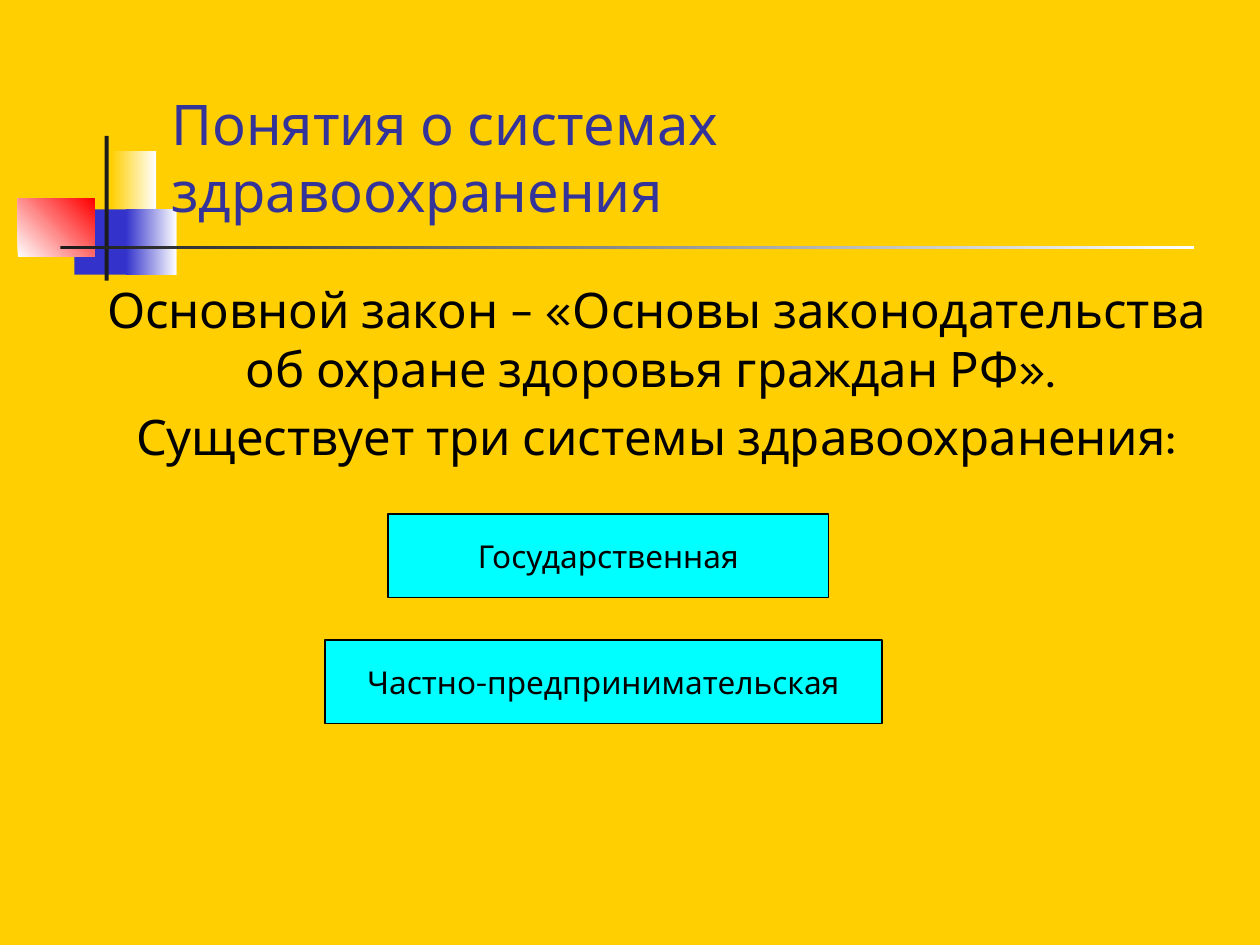
from pptx import Presentation
from pptx.dml.color import RGBColor
from pptx.enum.shapes import MSO_SHAPE as Shape
from pptx.enum.text import MSO_ANCHOR as Anchor, MSO_AUTO_SIZE as AutoSize, PP_ALIGN as Align
from pptx.util import Cm, Pt

FONT = "Karla"
YELLOW, BLUE, RED, WHITE = "FFCF01", "3333CC", "FF0000", "FFFFFF"
DARK, BLACK, CYAN, NAVY = "1C1C1C", "000000", "00FFFF", "333399"

# left, top, width, height in cm; colours (two make a gradient); angle
DECORATION = [
    ((2.24, 3.05, 0.91, 1.32), (YELLOW, WHITE), 0),
    ((1.5, 4.22, 1.17, 1.32), (BLUE,), 0),
    ((2.54, 4.22, 1.02, 1.32), (BLUE, WHITE), 0),
    ((0.36, 4.01, 1.55, 1.17), (WHITE, RED), 45),
    ((2.11, 2.74, 0.08, 2.92), (DARK,), 0),
    ((1.22, 4.95, 22.86, 0.08), (DARK, WHITE), 0),
]
SYSTEMS = [
    ("Государственная", (7.82, 10.36, 8.89, 1.69)),
    ("Частно-предпринимательская", (6.55, 12.9, 11.23, 1.69)),
]
BODY = [
    "Основной закон – «Основы законодательства об охране здоровья граждан РФ». ",
    "Существует три системы здравоохранения:",
]


def rgb(value):
    return RGBColor.from_string(value)


def add_run(p, text, size, color):
    r = p.add_run()
    r.text = text
    r.font.name = FONT
    r.font.size = Pt(size)
    r.font.color.rgb = rgb(color)


def add_rect(s, box, colors, angle=0):
    sp = s.shapes.add_shape(Shape.RECTANGLE, *map(Cm, box))
    sp.shadow.inherit = False
    sp.line.fill.background()
    if len(colors) == 1:
        sp.fill.solid()
        sp.fill.fore_color.rgb = rgb(colors[0])
    else:
        sp.fill.gradient()
        sp.fill.gradient_angle = angle
        for stop, color in zip(sp.fill.gradient_stops, colors):
            stop.color.rgb = rgb(color)
    return sp


def add_title(s, text):
    sp = s.shapes.title
    sp.left, sp.top, sp.width, sp.height = map(Cm, (3.2, 0.58, 21.64, 4.06))
    tf = sp.text_frame
    tf.auto_size = AutoSize.NONE
    tf.vertical_anchor = Anchor.BOTTOM
    tf.margin_right = Cm(1)
    p = tf.paragraphs[0]
    p.alignment = Align.LEFT
    add_run(p, text, 32, NAVY)
    # Bring the title in front of the decoration
    s.shapes.element.append(sp.element)


def add_body(s, texts):
    tf = s.shapes.add_textbox(*map(Cm, (0.84, 5.51, 23.83, 11.43))).text_frame
    tf.word_wrap = True
    tf.margin_left = Cm(1.21)
    for i, text in enumerate(texts):
        p = tf.add_paragraph() if i else tf.paragraphs[0]
        p.alignment = Align.CENTER
        p.space_before = Pt(5.6)
        add_run(p, text, 28, BLACK)


def add_label_box(s, text, box):
    sp = add_rect(s, box, (CYAN,))
    sp.line.color.rgb = rgb(BLACK)
    sp.line.width = Pt(0.75)
    tf = sp.text_frame
    tf.word_wrap = False
    tf.vertical_anchor = Anchor.MIDDLE
    p = tf.paragraphs[0]
    p.alignment = Align.CENTER
    add_run(p, text, 18, BLACK)


def main():
    prs = Presentation()
    prs.slide_width, prs.slide_height = Cm(25.4), Cm(19.05)
    s = prs.slides.add_slide(prs.slide_layouts[5])
    s.background.fill.solid()
    s.background.fill.fore_color.rgb = rgb(YELLOW)

    # Corner squares and rules
    for box, colors, angle in DECORATION:
        add_rect(s, box, colors, angle)

    # Title and text
    add_title(s, "Понятия о системах здравоохранения")
    add_body(s, BODY)

    # Health care systems
    for text, box in SYSTEMS:
        add_label_box(s, text, box)

    prs.save("out.pptx")


if __name__ == "__main__":
    main()
